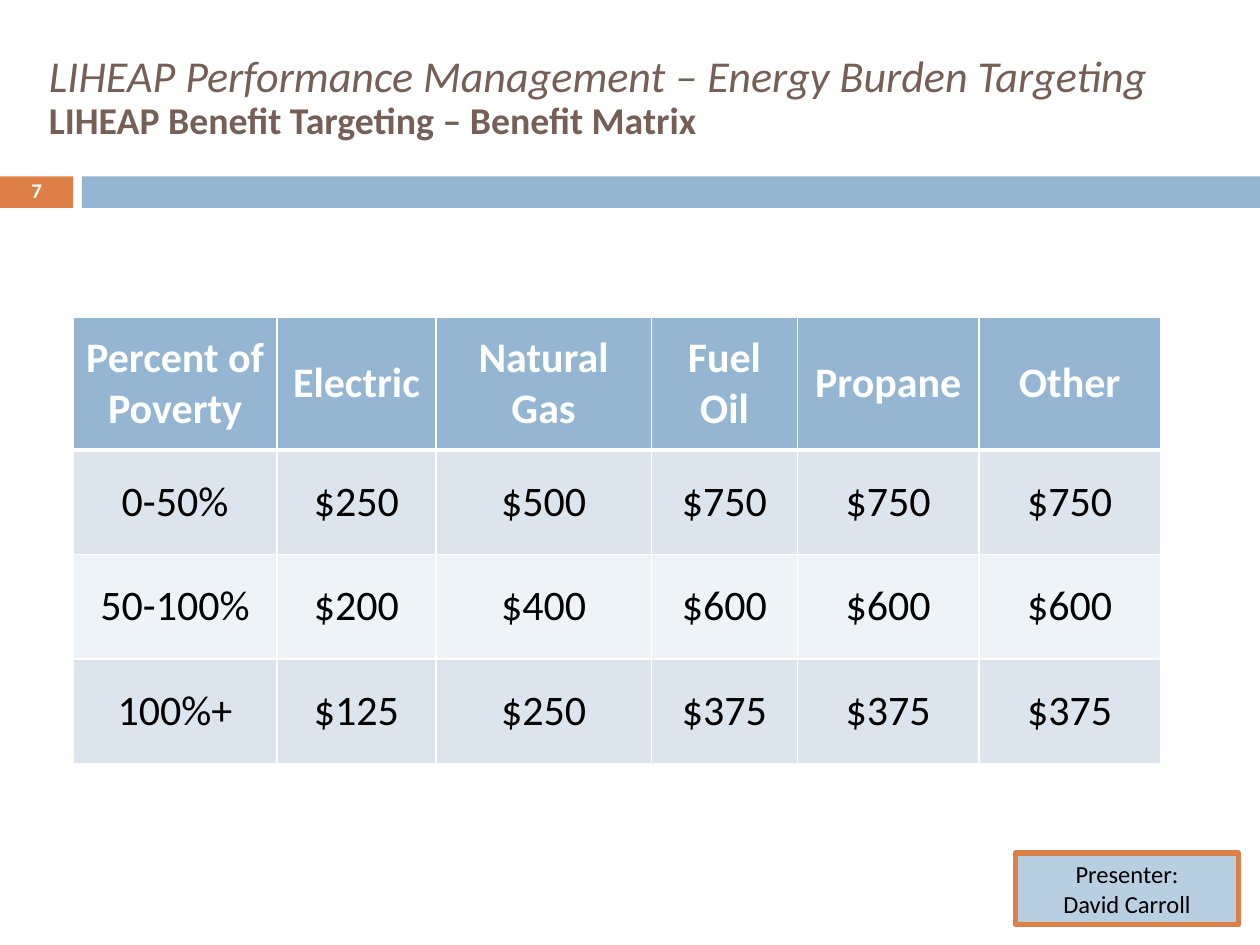
from dataclasses import dataclass

from lxml import etree
from pptx import Presentation
from pptx.dml.color import RGBColor
from pptx.enum.shapes import MSO_SHAPE as Shape
from pptx.enum.text import MSO_ANCHOR as Anchor, MSO_AUTO_SIZE as Fit, PP_ALIGN as Align
from pptx.oxml.ns import qn
from pptx.util import Inches, Pt


@dataclass(frozen=True)
class Theme:
    font: str = "Calibri"
    blue: str = "94B6D2"
    orange: str = "DD8047"
    brown: str = "775F55"
    white: str = "FFFFFF"
    black: str = "000000"
    bands: tuple = ("DCE5EE", "EEF3F7")
    title: float = 25.2
    sub: float = 21.6
    cell: float = 24
    note: float = 14
    number: float = 11.9


THEME = Theme()
HEADS = ["Percent of Poverty", "Electric", "Natural Gas", "Fuel Oil", "Propane", "Other"]
ROWS = [
    ["0-50%", 250, 500, 750, 750, 750],
    ["50-100%", 200, 400, 600, 600, 600],
    ["100%+", 125, 250, 375, 375, 375],
]
COLS = [1.62, 1.26, 1.71, 1.16, 1.44, 1.44]
HEIGHTS = [1.05, 0.83, 0.83, 0.83]


def inches(box):
    return [Inches(v) for v in box]


def paint(fill, color):
    fill.solid()
    fill.fore_color.rgb = RGBColor.from_string(color)


def add_run(para, text, size, color, bold=False, italic=False):
    run = para.add_run()
    run.text = text
    font = run.font
    font.name, font.size = THEME.font, Pt(size)
    font.bold, font.italic = bold, italic
    font.color.rgb = RGBColor.from_string(color)


def add_rect(slide, box, color):
    rect = slide.shapes.add_shape(Shape.RECTANGLE, *inches(box))
    rect.shadow.inherit = False
    paint(rect.fill, color)
    rect.line.fill.background()
    return rect


def add_text(slide, box, spacing):
    """Add a middle-anchored text box and return its first paragraph."""
    frame = slide.shapes.add_textbox(*inches(box)).text_frame
    frame.word_wrap = True
    frame.vertical_anchor = Anchor.MIDDLE
    para = frame.paragraphs[0]
    para.line_spacing = spacing
    return para


def add_title(slide, box):
    para = add_text(slide, box, 0.9)
    add_run(para, "LIHEAP Performance Management – Energy Burden Targeting",
            THEME.title, THEME.brown, italic=True)
    para.add_line_break()
    add_run(para, "LIHEAP Benefit Targeting – Benefit Matrix",
            THEME.sub, THEME.brown, bold=True)


def add_band(slide, box):
    """Draw the orange number tab and the blue bar beside it."""
    left, top, width, height = box
    tab, gap = 0.58, 0.07
    start = tab + gap
    add_rect(slide, (left, top, tab, height), THEME.orange)
    add_rect(slide, (left + start, top, width - start, height), THEME.blue)
    para = add_text(slide, (left, top - 0.01, tab, height + 0.02), 0.8)
    para.alignment = Align.CENTER
    add_run(para, "7", THEME.number, THEME.white, bold=True)


def add_edges(cell, base):
    """Draw white cell borders; base is the width of the bottom one."""
    props = cell._tc.get_or_add_tcPr()
    sides = {"a:lnL": 1, "a:lnR": 1, "a:lnT": 1, "a:lnB": base}
    for place, (tag, width) in enumerate(sides.items()):
        line = etree.Element(qn(tag), w=str(Pt(width)))
        fill = etree.SubElement(line, qn("a:solidFill"))
        etree.SubElement(fill, qn("a:srgbClr"), val=THEME.white)
        props.insert(place, line)


def fill_cell(cell, value, row):
    head = row == 0
    paint(cell.fill, THEME.blue if head else THEME.bands[(row - 1) % 2])
    add_edges(cell, 3 if head else 1)
    cell.vertical_anchor = Anchor.MIDDLE
    para = cell.text_frame.paragraphs[0]
    para.alignment = Align.CENTER
    para.space_before = para.space_after = Pt(3)
    text = f"${value}" if isinstance(value, int) else value
    add_run(para, text, THEME.cell, THEME.white if head else THEME.black, bold=head)


def add_matrix(slide, box):
    data = [HEADS, *ROWS]
    table = slide.shapes.add_table(len(data), len(HEADS), *inches(box)).table
    for col, width in zip(table.columns, COLS):
        col.width = Inches(width)
    for row, height in zip(table.rows, HEIGHTS):
        row.height = Inches(height)
    for r, values in enumerate(data):
        for c, value in enumerate(values):
            fill_cell(table.cell(r, c), value, r)


def add_note(slide, box):
    rect = add_rect(slide, box, THEME.blue)
    tint = rect.fill._xPr.find(qn("a:solidFill"))[0]
    etree.SubElement(tint, qn("a:alpha"), val="66000")
    paint(rect.line.fill, THEME.orange)
    rect.line.width = Pt(3)
    frame = rect.text_frame
    frame.word_wrap = True
    frame.auto_size = Fit.SHAPE_TO_FIT_TEXT
    frame.vertical_anchor = Anchor.TOP
    for i, text in enumerate(["Presenter:", "David Carroll"]):
        para = frame.add_paragraph() if i else frame.paragraphs[0]
        para.alignment = Align.CENTER
        add_run(para, text, THEME.note, THEME.black)


def main():
    deck = Presentation()
    deck.slide_width, deck.slide_height = Inches(10), Inches(7.5)
    slide = deck.slides.add_slide(deck.slide_layouts[6])
    paint(slide.background.fill, THEME.white)
    add_band(slide, (0, 1.4, 10, 0.25))
    add_title(slide, (0.29, 0.24, 9.3, 1.08))
    add_note(slide, (8.06, 6.77, 1.77, 0.57))
    add_matrix(slide, (0.58, 2.52, sum(COLS), sum(HEIGHTS)))
    deck.save("out.pptx")


if __name__ == "__main__":
    main()
